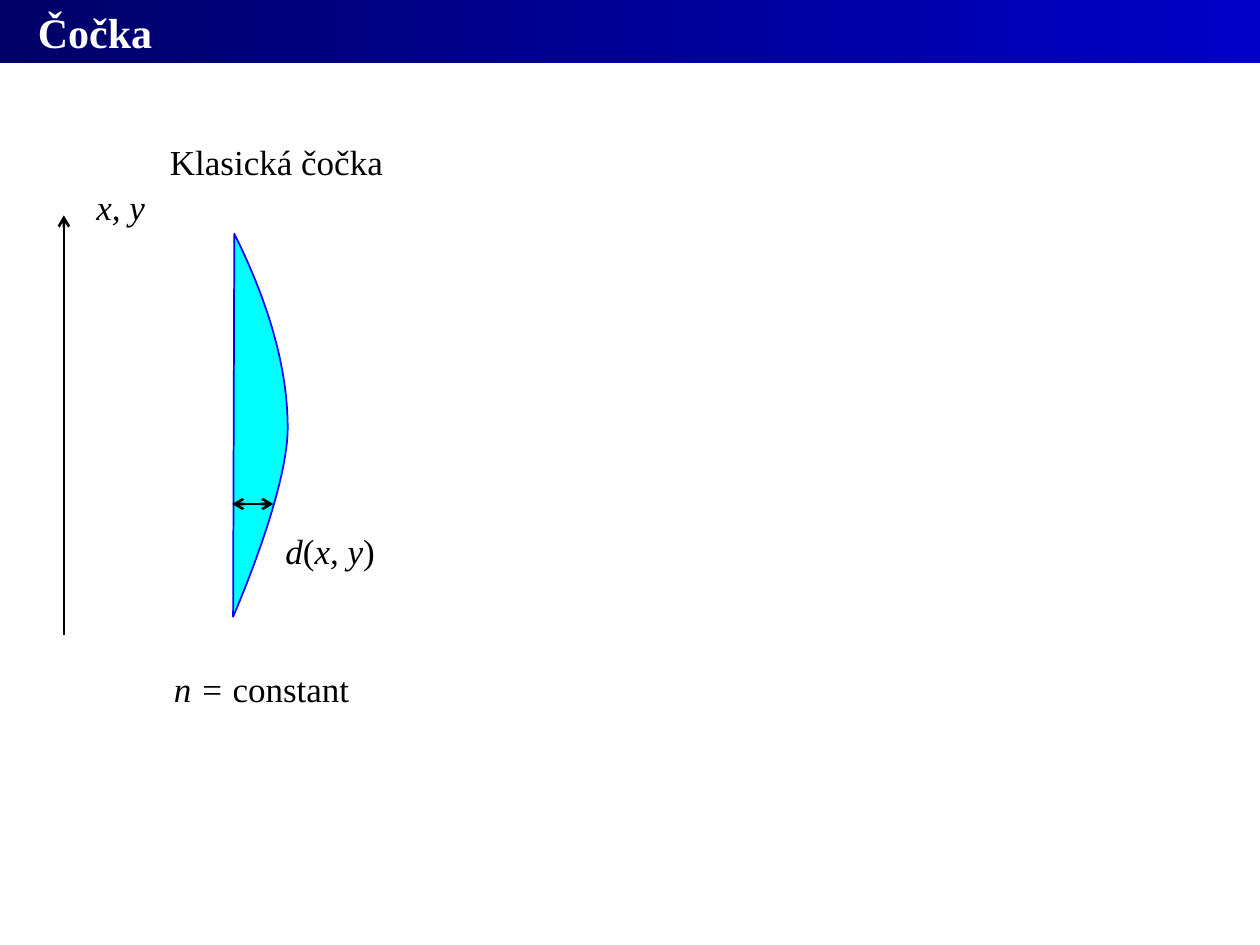
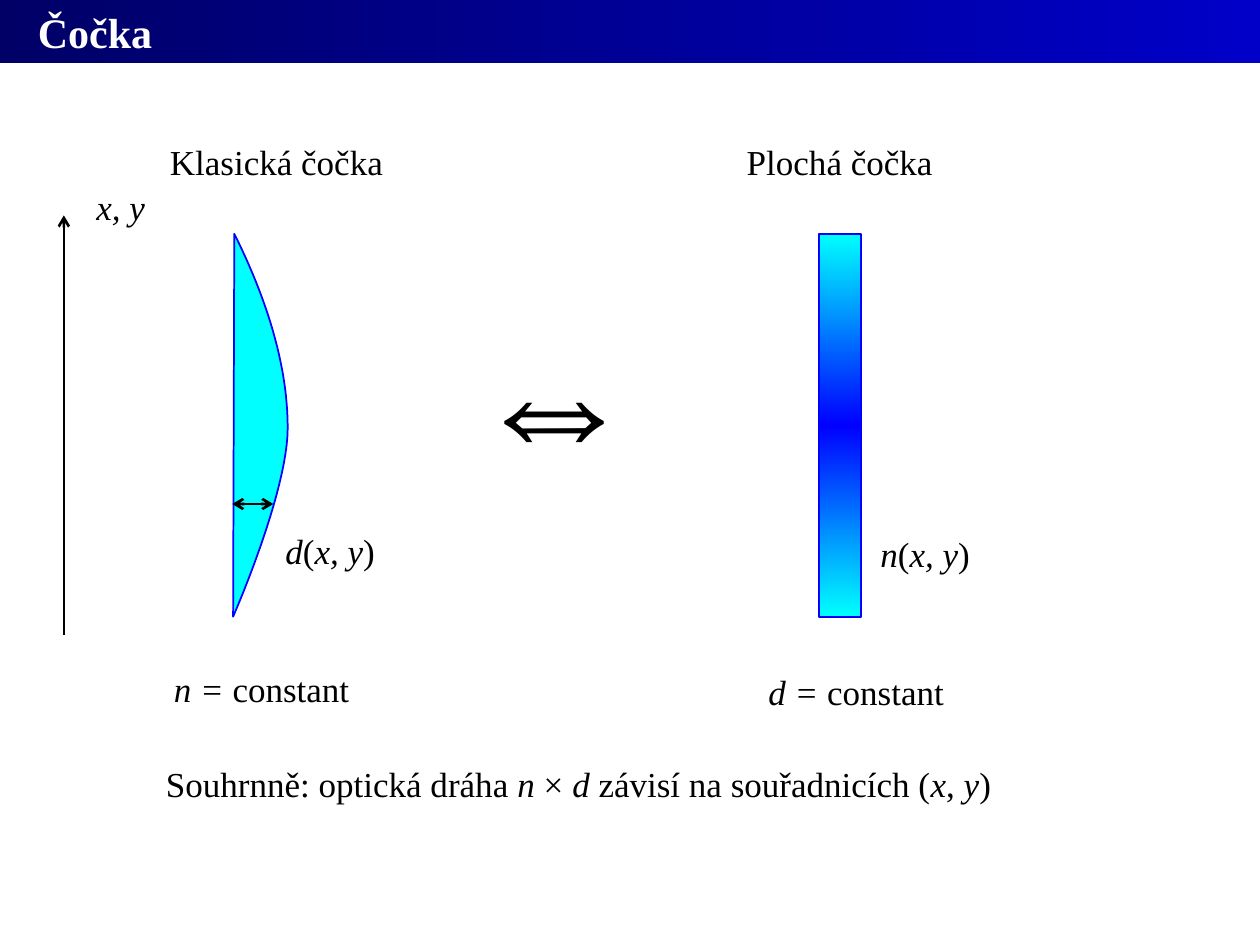
from lxml import etree
from pptx import Presentation
from pptx import util as u
from pptx.dml.color import RGBColor
from pptx.enum import shapes, text
from pptx.oxml.ns import qn

COLORS = {"ink": "000000", "white": "FFFFFF", "band_dark": "000066",
          "band_light": "0000C8", "glass": "00FFFF", "edge": "0000FF"}
RGB = {name: RGBColor.from_string(value) for name, value in COLORS.items()}
FONT = "Times New Roman"
LENS_TOP, LENS_HEIGHT = 133.6, 218.9


def add_label(page, wording, left, top, width, height=31.7, size=20, align=text.PP_ALIGN.LEFT):
    """Place a one-line label; parts between underscores are italic."""
    box = page.shapes.add_textbox(u.Pt(left), u.Pt(top), u.Pt(width), u.Pt(height))
    frame = box.text_frame
    frame.word_wrap = False
    frame.auto_size = text.MSO_AUTO_SIZE.SHAPE_TO_FIT_TEXT
    para = frame.paragraphs[0]
    para.alignment = align
    para.font.name, para.font.size = FONT, u.Pt(size)
    para.font.color.rgb = RGB["ink"]
    for index, part in enumerate(wording.split("_")):
        if part:
            span = para.add_run()
            span.text = part
            span.font.italic = index % 2 == 1


def set_gradient(shape, names, angle):
    """Fill a shape with evenly spaced colour stops."""
    shape.fill.gradient()
    shape.fill.gradient_angle = angle
    stops = shape.element.spPr.find(qn("a:gradFill")).find(qn("a:gsLst"))
    for stop in list(stops):
        stops.remove(stop)
    for index, name in enumerate(names):
        position = round(100000 * index / (len(names) - 1))
        stop = etree.SubElement(stops, qn("a:gs"), pos=str(position))
        etree.SubElement(stop, qn("a:srgbClr"), val=COLORS[name])


deck = Presentation()
deck.slide_width, deck.slide_height = u.Pt(720), u.Pt(540)

# Lens outline: the curved face is sampled from two cubic Bezier arcs
arcs = [[(133.9, 133.6), (152, 170), (164.4, 208), (164.4, 244.5)],
        [(164.4, 244.5), (164.4, 281.5), (133.2, 352.4), (133.2, 352.4)]]
STEPS = 24
outline = []
for arc in arcs:
    for step in range(1, STEPS + 1):
        t = step / STEPS
        weights = ((1 - t) ** 3, 3 * t * (1 - t) ** 2, 3 * t ** 2 * (1 - t), t ** 3)
        outline.append(tuple(u.Pt(sum(w * point[axis] for w, point in zip(weights, arc)))
                             for axis in (0, 1)))

# Arrows: start, end, ends that carry a head
arrows = [((36.5, 362.9), (36.5, 123.1), ["tailEnd"]),
          ((156.2, 288), (132.7, 288), ["headEnd", "tailEnd"])]

for flat_lens_shown in (False, True):
    page = deck.slides.add_slide(deck.slide_layouts[5])

    # Title band
    title = page.shapes.title
    title.left, title.top, title.width, title.height = 0, 0, u.Pt(720), u.Pt(36)
    set_gradient(title, ["band_dark", "band_light"], 0)
    frame = title.text_frame
    frame.text = "Čočka"
    frame.auto_size = text.MSO_AUTO_SIZE.NONE
    frame.vertical_anchor = text.MSO_ANCHOR.MIDDLE
    para = frame.paragraphs[0]
    para.alignment = text.PP_ALIGN.LEFT
    para._p.get_or_add_pPr().set("marL", str(u.Pt(14.4)))
    para.font.name, para.font.size, para.font.bold = FONT, u.Pt(24), True
    para.font.color.rgb = RGB["white"]

    # Classical lens
    builder = page.shapes.build_freeform(u.Pt(arcs[0][0][0]), u.Pt(arcs[0][0][1]))
    builder.add_line_segments(outline, close=True)
    lens = builder.convert_to_shape()
    lens.shadow.inherit = False
    lens.fill.solid()
    lens.fill.fore_color.rgb = RGB["glass"]
    lens.line.color.rgb, lens.line.width = RGB["edge"], u.Pt(1)

    # Axis and thickness arrows
    for start, end, heads in arrows:
        arrow = page.shapes.add_connector(shapes.MSO_CONNECTOR.STRAIGHT,
                                          *(u.Pt(value) for value in start + end))
        arrow.line.color.rgb, arrow.line.width = RGB["ink"], u.Pt(1.5)
        for head in heads:
            etree.SubElement(arrow.line._get_or_add_ln(), qn("a:" + head), type="arrow")
        etree.SubElement(arrow.element.spPr, qn("a:effectLst"))

    # Labels of the classical lens
    add_label(page, "_x, y_", 48, 102.2, 42.5)
    add_label(page, "_d_(_x, y_)", 156, 299, 67)
    add_label(page, "_n = _constant", 92.2, 378, 116.6)
    add_label(page, "Klasická čočka", 90, 76.5, 137.5)

    if flat_lens_shown:
        # Flat lens with a graded index
        plate = page.shapes.add_shape(shapes.MSO_SHAPE.RECTANGLE, u.Pt(468), u.Pt(LENS_TOP),
                                      u.Pt(24), u.Pt(LENS_HEIGHT))
        plate.shadow.inherit = False
        set_gradient(plate, ["glass", "edge", "glass"], 90)
        plate.line.color.rgb, plate.line.width = RGB["edge"], u.Pt(1)

        # Labels of the flat lens, summary and equivalence sign
        center = text.PP_ALIGN.CENTER
        add_label(page, "Plochá čočka", 419, 76.5, 121.7, align=center)
        add_label(page, "_n_(_x, y_)", 496, 300.5, 67)
        add_label(page, "_d = _constant", 432, 379.5, 116.6)
        add_label(page, "Souhrnně: optická dráha _n_ × _d _závisí na souřadnicích (_x_, _y_)",
                  85, 432, 491, align=center)
        add_label(page, "⇔", 262, 164, 115.2, 123.8, size=96)

deck.save("out.pptx")
